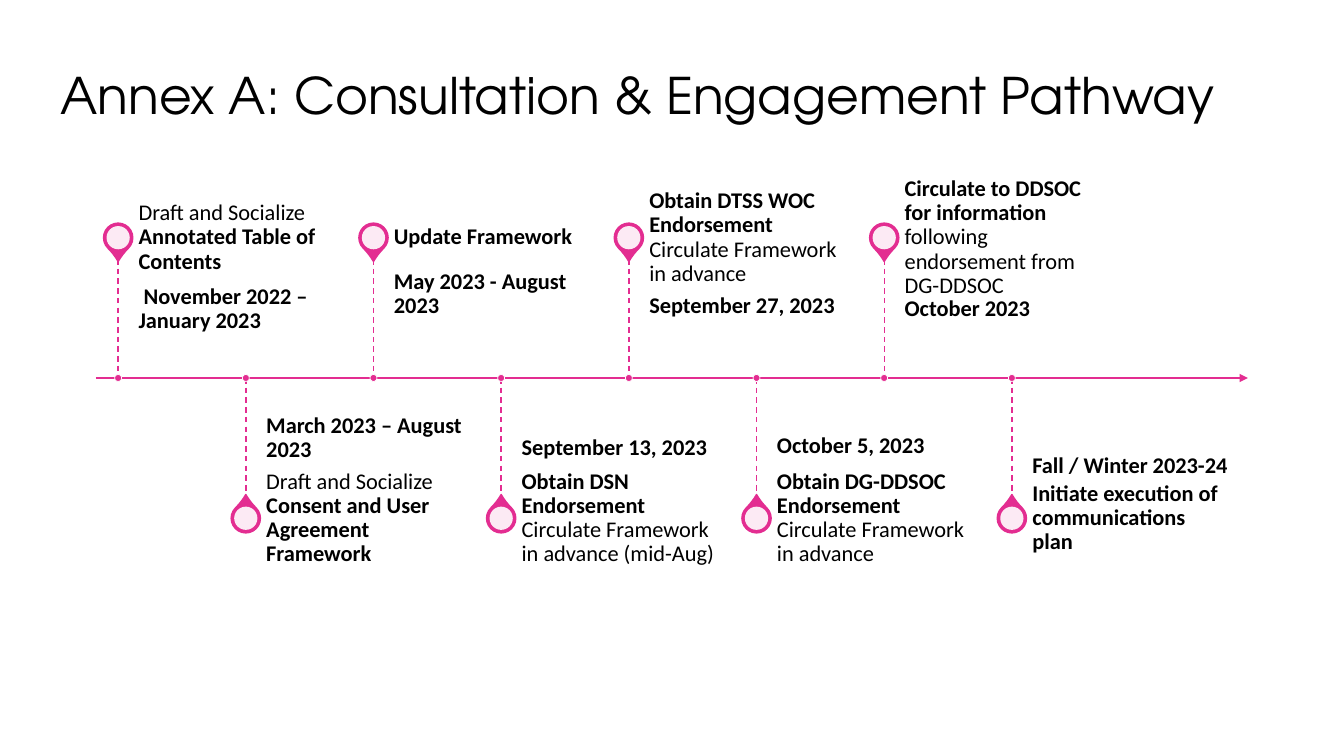
from lxml import etree
from pptx import Presentation
from pptx.dml.color import RGBColor
from pptx.enum.dml import MSO_LINE
from pptx.enum.shapes import MSO_CONNECTOR, MSO_SHAPE
from pptx.enum.text import MSO_ANCHOR
from pptx.oxml.ns import qn
from pptx.util import Pt

COLORS = {"pink": "E32D91", "white": "FFFFFF", "black": "000000"}
AXIS_Y = 270
FIRST_X, STEP_X = 84.4, 91.2
PIN_OFFSET, STEM_LENGTH, DATE_OFFSET = 100.2, 85, 42.5
PIN_SIZE, HOLE_SIZE, DOT_SIZE = 20.9, 16.6, 5
TEXT_GAP, TEXT_WIDTH = 14.6, 152

# date, date box height, label box height, label parts as (text, bold);
# milestones alternate above and below the axis
MILESTONES = [
    (" November 2022 – January 2023", 63.4, 22.3,
     [("Draft and Socialize", False), ("Annotated Table of Contents", True)]),
    ("March 2023 – August 2023", 51.1, 18,
     [("Draft and Socialize", False), ("Consent and User Agreement Framework", True)]),
    ("May 2023 - August 2023", 85, 30.2, [("Update Framework", True)]),
    ("September 13, 2023", 46.1, 15.8,
     [("Obtain DSN Endorsement", True), ("Circulate Framework in advance (mid-Aug)", False)]),
    ("September 27, 2023", 47.5, 16.6,
     [("Obtain DTSS WOC Endorsement", True), ("Circulate Framework in advance", False)]),
    ("October 5, 2023", 42.5, 15.1,
     [("Obtain DG-DDSOC Endorsement", True), ("Circulate Framework in advance", False)]),
    ("October 2023", 43.9, 15.1,
     [("Circulate to DDSOC for information", True),
      ("following endorsement from DG-DDSOC", False)]),
    ("Fall / Winter 2023-24", 72, 25.2,
     [("Initiate execution of communications", True), ("plan", True)]),
]


class TimelineSlide:
    def __init__(self, slide, font="Calibri", size=16):
        self.slide = slide
        self.font = font
        self.size = size

    def color(self, name):
        return RGBColor.from_string(COLORS[name])

    def line(self, start, end, width, dashed=False, arrow=False):
        connector = self.slide.shapes.add_connector(
            MSO_CONNECTOR.STRAIGHT, *(Pt(value) for value in (*start, *end)))
        connector.line.color.rgb = self.color("pink")
        connector.line.width = Pt(width)
        if dashed:
            connector.line.dash_style = MSO_LINE.DASH
        if arrow:
            outline = connector.line._get_or_add_ln()
            etree.SubElement(outline, qn("a:tailEnd"), type="triangle")
        etree.SubElement(connector._element.spPr, qn("a:effectLst"))

    def marker(self, kind, x, y, size, fill, outline=None, width=0):
        """Draw a filled shape centred on x, y."""
        shape = self.slide.shapes.add_shape(
            kind, Pt(x - size / 2), Pt(y - size / 2), Pt(size), Pt(size))
        shape.shadow.inherit = False
        shape.fill.solid()
        shape.fill.fore_color.rgb = self.color(fill)
        if outline:
            shape.line.color.rgb = self.color(outline)
            shape.line.width = Pt(width)
        else:
            shape.line.fill.background()
        return shape

    def pin(self, x, y, rotation):
        drop = self.marker(MSO_SHAPE.TEAR, x, y, PIN_SIZE, "pink", "pink", 1)
        drop.adjustments[0] = 1.15
        drop.rotation = rotation
        hole = self.marker(MSO_SHAPE.OVAL, x, y, HOLE_SIZE, "white")
        fill_color = hole._element.spPr.find(qn("a:solidFill"))[0]
        etree.SubElement(fill_color, qn("a:alpha"), val="90000")

    def text(self, parts, left, middle, width, height, anchor, insets, font=None, size=None):
        """Write (text, bold) parts, one under the other, in a box centred on middle."""
        box = self.slide.shapes.add_textbox(
            Pt(left), Pt(middle - height / 2), Pt(width), Pt(height))
        frame = box.text_frame
        frame.word_wrap = True
        frame.vertical_anchor = anchor
        (frame.margin_left, frame.margin_top,
         frame.margin_right, frame.margin_bottom) = (Pt(inset) for inset in insets)
        paragraph = frame.paragraphs[0]
        paragraph.text = "\v".join(text for text, _ in parts)
        paragraph.line_spacing = 0.9
        for run, (_, bold) in zip(paragraph.runs, parts):
            run.font.name = font or self.font
            run.font.size = Pt(size or self.size)
            run.font.bold = bold
            run.font.color.rgb = self.color("black")

    def milestone(self, x, above, date, date_height, label_height, label):
        side = -1 if above else 1
        pin_y = AXIS_Y + side * PIN_OFFSET
        self.pin(x, pin_y, 135 if above else 315)
        left = x + TEXT_GAP
        self.text([(date, True)], left, AXIS_Y + side * DATE_OFFSET, TEXT_WIDTH, date_height,
                  MSO_ANCHOR.TOP if above else MSO_ANCHOR.BOTTOM,
                  (0, 8, 8, 12) if above else (0, 12, 0, 8))
        self.text(label, left, pin_y, TEXT_WIDTH, label_height, MSO_ANCHOR.MIDDLE, (0, 0, 8, 0))
        stem_ends = sorted((AXIS_Y, AXIS_Y + side * STEM_LENGTH))
        self.line((x, stem_ends[0]), (x, stem_ends[1]), 1, dashed=True)
        self.marker(MSO_SHAPE.OVAL, x, AXIS_Y, DOT_SIZE, "pink", "white", 0.5)


def main():
    presentation = Presentation()
    presentation.slide_width, presentation.slide_height = Pt(960), Pt(540)
    timeline = TimelineSlide(presentation.slides.add_slide(presentation.slide_layouts[6]))
    timeline.line((68.4, AXIS_Y), (891.4, AXIS_Y), 1.5, arrow=True)
    for index, milestone in enumerate(MILESTONES):
        timeline.milestone(FIRST_X + index * STEP_X, index % 2 == 0, *milestone)
    timeline.text([("Annex A: Consultation & Engagement Pathway", False)],
                  36, 66.6, 872, 52.6, MSO_ANCHOR.BOTTOM, (7.2, 3.6, 7.2, 3.6),
                  font="TeX Gyre Adventor", size=36)
    presentation.save("out.pptx")


if __name__ == "__main__":
    main()
